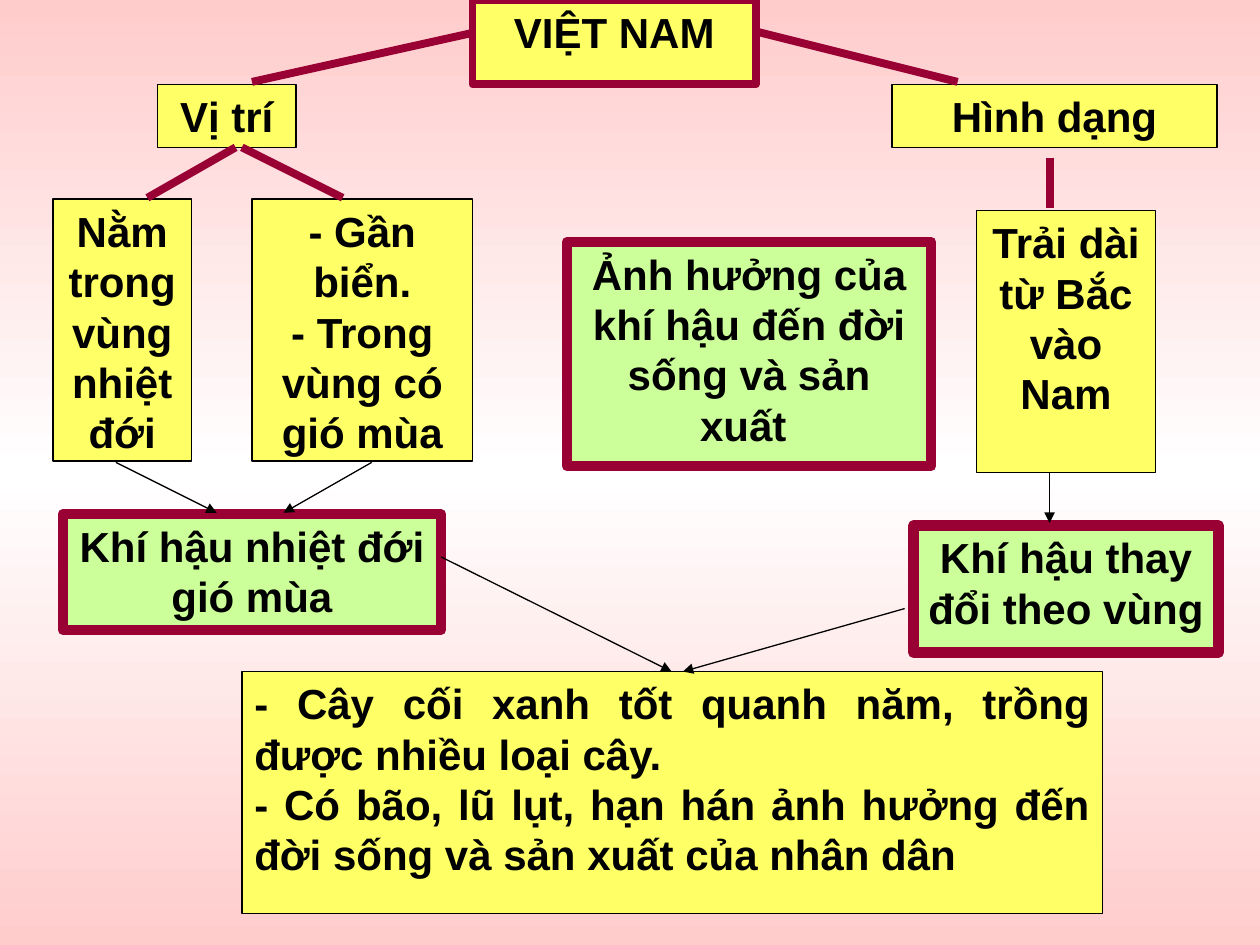
from copy import deepcopy
from dataclasses import dataclass

from pptx import Presentation
from pptx.dml.color import RGBColor
from pptx.enum import shapes, text
from pptx.oxml import ns, xmlchemy
from pptx.util import Inches, Pt


@dataclass(frozen=True)
class Theme:
    font: str = "Arial"
    size: float = 24
    ink: str = "000000"
    wine: str = "990033"
    yellow: str = "FFFF66"
    green: str = "CCFF99"
    pink: str = "FFCCCC"
    white: str = "FFFFFF"
    thin: float = 0.75
    bold: float = 4.5
    thick: float = 6


THEME = Theme()
PLAIN = (THEME.yellow, THEME.ink, THEME.thin)
TITLE = (THEME.yellow, THEME.wine, THEME.bold)
KEY = (THEME.green, THEME.wine, THEME.thick)

# place (left, top, width, height), style, lines of text
BOXES = [
    ((1.25, 0.67, 1.1, 0.5), PLAIN, ["Vị trí"]),
    ((7.08, 0.67, 2.58, 0.5), PLAIN, ["Hình dạng"]),
    ((0.42, 1.58, 1.1, 2.08), PLAIN, ["Nằm trong vùng nhiệt đới"]),
    ((2, 1.58, 1.75, 2.08), PLAIN, ["- Gần biển.", "- Trong vùng có gió mùa"]),
    ((7.75, 1.67, 1.42, 2.08), PLAIN, ["Trải dài từ Bắc vào Nam"]),
    ((0.5, 4.08, 3, 0.92), KEY, ["Khí hậu nhiệt đới gió mùa"]),
    ((7.25, 4.17, 2.42, 1.01), KEY, ["Khí hậu thay đổi theo vùng"]),
]
EFFECTS = (1.92, 5.33, 6.83, 1.92), PLAIN, [
    "- Cây cối xanh tốt quanh năm, trồng được nhiều loại cây.",
    "- Có bão, lũ lụt, hạn hán ảnh hưởng đến đời sống và sản xuất của nhân dân",
]
TOP_BOXES = [
    ((3.75, 0, 2.25, 0.67), TITLE, ["VIỆT NAM"]),
    ((4.5, 1.92, 2.89, 1.78), KEY,
     ["Ảnh hưởng của khí hậu đến đời sống và sản xuất "]),
]

# x1, y1, x2, y2
BRANCHES = [
    (2, 0.65, 3.8, 0.25),
    (7.6, 0.65, 6, 0.25),
    (8.33, 1.25, 8.33, 1.65),
    (1.87, 1.17, 1.17, 1.57),
    (1.92, 1.17, 2.72, 1.57),
]
ARROWS = [
    (0.92, 3.67, 1.72, 4.07),
    (2.95, 3.67, 2.25, 4.07),
    (8.33, 3.75, 8.33, 4.15),
    (3.5, 4.42, 5.33, 5.33),
    (7.18, 4.83, 5.42, 5.33),
]


def rgb(code):
    return RGBColor.from_string(code)


def paint_back(slide):
    """Fill the background with a pink, white, pink gradient from top to bottom."""
    fill = slide.background.fill
    fill.gradient()
    fill.gradient_angle = 270
    stops = next(slide.background._cSld.iter(ns.qn("a:gsLst")))
    stops.append(deepcopy(stops[-1]))
    shades = (THEME.pink, THEME.white, THEME.pink)
    for stop, place, shade in zip(fill.gradient_stops, (0, 0.5, 1), shades):
        stop.position = place
        stop.color.rgb = rgb(shade)


def add_box(slide, place, style, lines, align=text.PP_ALIGN.CENTER):
    fill, edge, width = style
    box = slide.shapes.add_shape(
        shapes.MSO_SHAPE.RECTANGLE, *(Inches(n) for n in place))
    box.shadow.inherit = False
    box.fill.solid()
    box.fill.fore_color.rgb = rgb(fill)
    box.line.color.rgb = rgb(edge)
    box.line.width = Pt(width)
    frame = box.text_frame
    frame.word_wrap = True
    frame.vertical_anchor = text.MSO_ANCHOR.TOP
    frame.text = "\n".join(lines)
    for para in frame.paragraphs:
        para.alignment = align
        for run in para.runs:
            font = run.font
            font.name, font.size, font.bold = THEME.font, Pt(THEME.size), True
            font.color.rgb = rgb(THEME.ink)


def add_line(slide, ends, color, width, arrow=False):
    line = slide.shapes.add_connector(
        shapes.MSO_CONNECTOR.STRAIGHT, *(Inches(n) for n in ends))
    line.line.color.rgb = rgb(color)
    line.line.width = Pt(width)
    if arrow:
        tip = xmlchemy.OxmlElement("a:tailEnd")
        tip.set("type", "triangle")
        line.line._get_or_add_ln().append(tip)
    line._element.spPr.append(xmlchemy.OxmlElement("a:effectLst"))


def main():
    deck = Presentation()
    deck.slide_width, deck.slide_height = Inches(10), Inches(7.5)
    slide = deck.slides.add_slide(deck.slide_layouts[6])
    paint_back(slide)
    for box in BOXES:
        add_box(slide, *box)
    add_box(slide, *EFFECTS, align=text.PP_ALIGN.JUSTIFY)
    for ends in BRANCHES:
        add_line(slide, ends, THEME.wine, THEME.bold)
    for ends in ARROWS:
        add_line(slide, ends, THEME.ink, THEME.thin, arrow=True)
    for box in TOP_BOXES:
        add_box(slide, *box)
    deck.save("out.pptx")


if __name__ == "__main__":
    main()
